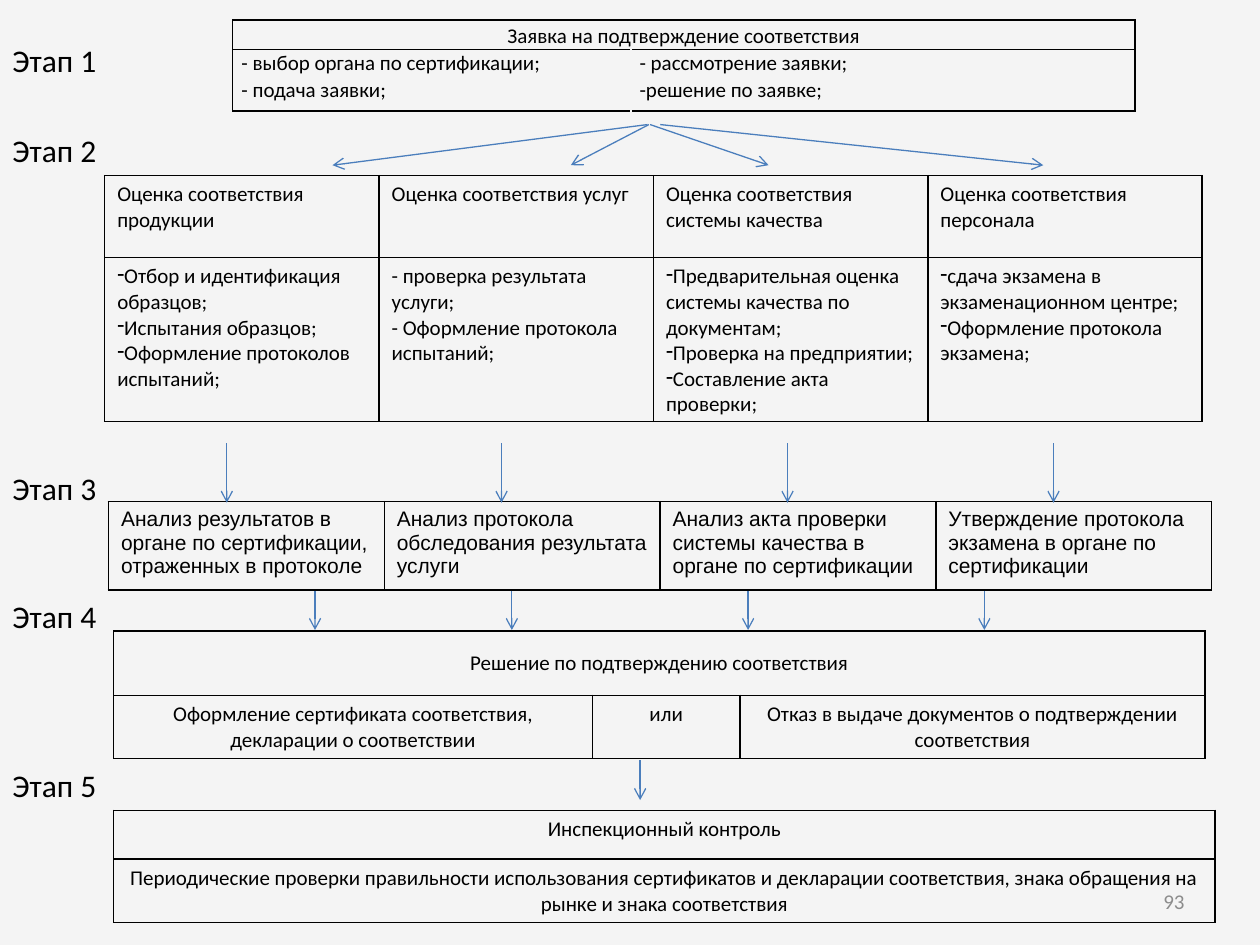
from pptx import Presentation
from pptx.dml.color import RGBColor
from pptx.enum.shapes import MSO_CONNECTOR
from pptx.enum.text import MSO_ANCHOR, PP_ALIGN
from pptx.oxml.ns import qn
from pptx.util import Pt
from lxml import etree

CENTER, LEFT, RIGHT = PP_ALIGN.CENTER, PP_ALIGN.LEFT, PP_ALIGN.RIGHT
MIDDLE, TOP = MSO_ANCHOR.MIDDLE, MSO_ANCHOR.TOP
STRAIGHT = MSO_CONNECTOR.STRAIGHT
BLACK, PAPER, BLUE, GREY = "000000", "F4F4F4", "4B7EBC", "8C8C8C"

# Cells: a string is one paragraph, a list plain paragraphs, a tuple dashed bullets.
# None is covered by the merged cell on its left.
APPLICATION = [
    ["Заявка на подтверждение соответствия", None],
    [["- выбор органа по сертификации;", "- подача заявки;"],
     ["- рассмотрение заявки;", "-решение по заявке;"]],
]
ASSESSMENT = [
    ["Оценка соответствия продукции", "Оценка соответствия услуг",
     "Оценка соответствия системы качества", "Оценка соответствия персонала"],
    [("Отбор и идентификация образцов;", "Испытания образцов;",
      "Оформление протоколов испытаний;"),
     ["- проверка результата услуги;", "- Оформление протокола испытаний;"],
     ("Предварительная оценка системы качества по документам;",
      "Проверка на предприятии;", "Составление акта проверки;"),
     ("сдача экзамена в экзаменационном центре;", "Оформление протокола экзамена;")],
]
ANALYSIS = [[
    "Анализ результатов в органе по сертификации, отраженных в протоколе",
    "Анализ протокола обследования результата услуги",
    "Анализ акта проверки системы качества в органе по сертификации",
    "Утверждение протокола экзамена в органе по сертификации",
]]
DECISION = [
    ["Решение по подтверждению соответствия", None, None],
    ["Оформление сертификата соответствия, декларации о соответствии", "или",
     "Отказ в выдаче документов о подтверждении соответствия"],
]
INSPECTION = [
    ["Инспекционный контроль"],
    ["Периодические проверки правильности использования сертификатов и декларации "
     "соответствия, знака обращения на рынке и знака соответствия"],
]
STAGES = [("Этап 1", 20, 82), ("Этап 2", 71.2, 106), ("Этап 3", 264.4, 82),
          ("Этап 4", 337.7, 82), ("Этап 5", 434.2, 82)]  # label, top, width

# (top, bottom, [(start x, end x), ...])
ARROWS = [
    (71.2, 94.4, [(370, 190), (377.3, 596.2), (370.8, 326.2), (371.5, 439.2)]),
    (253.4, 287.3, [(x, x) for x in (129.6, 286.6, 450, 602)]),
    (337.7, 360, [(x, x) for x in (180, 292.5, 427.5, 562.5)]),
    (434.2, 457.2, [(365.8, 365.8)]),
]


def rgb(color):
    return RGBColor.from_string(color)


def style(paragraph, size, color, font="Calibri", align=LEFT):
    paragraph.alignment = align
    for run in paragraph.runs:
        run.font.size, run.font.name = Pt(size), font
        run.font.color.rgb = rgb(color)


def add_dash(paragraph):
    """Give the paragraph a dash bullet without indent."""
    properties = paragraph._p.get_or_add_pPr()
    properties.set("marL", "0")
    properties.set("indent", "0")
    etree.SubElement(properties, qn("a:buChar")).set("char", "-")


def set_border(cell, side, color):
    """Draw one border; side is L, R, T or B."""
    properties = cell._tc.get_or_add_tcPr()
    for old in properties.findall(qn(f"a:ln{side}")):
        properties.remove(old)
    line = etree.Element(qn(f"a:ln{side}"), w=str(Pt(1)))
    fill = etree.SubElement(line, qn("a:solidFill"))
    etree.SubElement(fill, qn("a:srgbClr")).set("val", color)
    properties.insert("LRTB".index(side), line)


def add_table(slide, content, left, top, widths, heights, font="Calibri",
              align=LEFT, margins=(7.2, 3.6)):
    table = slide.shapes.add_table(len(heights), len(widths), Pt(left), Pt(top),
                                   Pt(sum(widths)), Pt(sum(heights))).table
    table.first_row = table.horz_banding = False
    for column, width in zip(table.columns, widths):
        column.width = Pt(width)
    for row, height in zip(table.rows, heights):
        row.height = Pt(height)
    for r, texts in enumerate(content):
        for c, text in enumerate(texts):
            cell = table.cell(r, c)
            cell.fill.background()
            for side in "LRTB":
                set_border(cell, side, BLACK)
            cell.margin_left = cell.margin_right = Pt(margins[0])
            cell.margin_top = cell.margin_bottom = Pt(margins[1])
            if text is None:
                continue
            lines = [text] if isinstance(text, str) else text
            cell.text_frame.text = "\n".join(lines)
            for paragraph in cell.text_frame.paragraphs:
                style(paragraph, 12, BLACK, font, align)
                if isinstance(text, tuple):
                    add_dash(paragraph)
        if None in texts:
            table.cell(r, 0).merge(table.cell(r, len(texts) - 1))
    return table


def add_label(slide, text, left, top, width, size, color, align=LEFT, anchor=TOP):
    frame = slide.shapes.add_textbox(Pt(left), Pt(top), Pt(width), Pt(29)).text_frame
    frame.word_wrap = True
    frame.vertical_anchor = anchor
    frame.text = text
    style(frame.paragraphs[0], size, color, align=align)


def add_arrow(slide, x1, y1, x2, y2):
    arrow = slide.shapes.add_connector(STRAIGHT, Pt(x1), Pt(y1), Pt(x2), Pt(y2))
    arrow.line.color.rgb = rgb(BLUE)
    arrow.line.width = Pt(0.75)
    etree.SubElement(arrow.line._get_or_add_ln(), qn("a:tailEnd")).set("type", "arrow")
    etree.SubElement(arrow._element.spPr, qn("a:effectLst"))


def main():
    deck = Presentation()
    deck.slide_width, deck.slide_height = Pt(720), Pt(540)
    slide = deck.slides.add_slide(deck.slide_layouts[6])
    slide.background.fill.solid()
    slide.background.fill.fore_color.rgb = rgb(PAPER)

    add_label(slide, "93", 516, 500.5, 168, 12, GREY, RIGHT, MIDDLE)

    application = add_table(slide, APPLICATION, 133, 11.5, [227.5, 288], [16.8, 35.2],
                            margins=(5, 0))
    heading = application.cell(0, 0).text_frame.paragraphs[0]
    heading.alignment, heading.line_spacing, heading.space_after = CENTER, 1.15, Pt(10)
    for c, inner_side in enumerate("RL"):
        cell = application.cell(1, c)
        set_border(cell, inner_side, PAPER)
        for paragraph in cell.text_frame.paragraphs:
            paragraph.line_spacing = 1.05

    add_table(slide, ASSESSMENT, 59.8, 100.4, [156.8] * 4, [46.8, 93.6])
    add_table(slide, ANALYSIS, 62, 286.6, [157.6] * 4, [50.6], font="Arial")
    decision = add_table(slide, DECISION, 65, 360.7, [273.6, 84.2, 265.8], [36.7, 36],
                         align=CENTER)
    decision.cell(0, 0).vertical_anchor = MIDDLE
    add_table(slide, INSPECTION, 65, 463, [629.3], [28, 36.2], align=CENTER)

    for top, bottom, spans in ARROWS:
        for start, end in spans:
            add_arrow(slide, start, top, end, bottom)
    for stage, top, width in STAGES:
        add_label(slide, stage, 0, top, width, 18, BLACK)

    deck.save("out.pptx")


if __name__ == "__main__":
    main()
